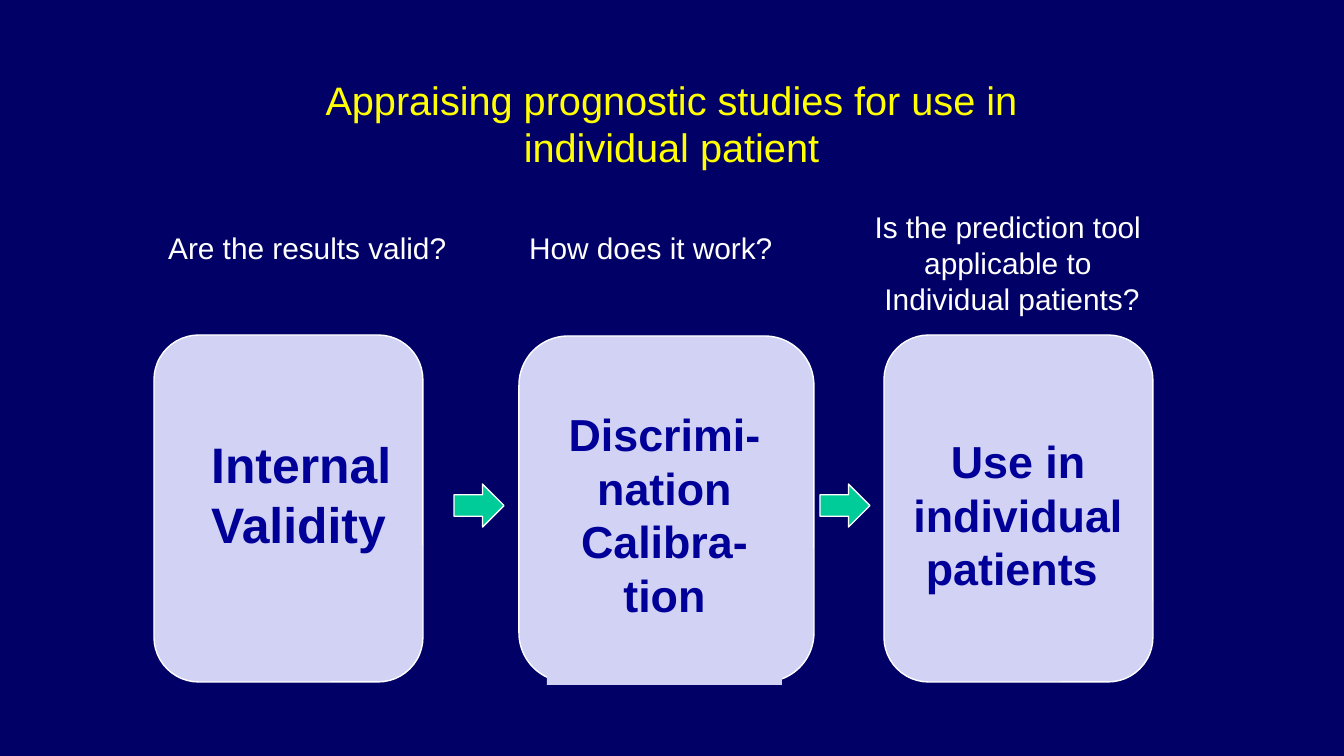
from pptx import Presentation
from pptx import util as u
from pptx.dml.color import RGBColor
from pptx.enum import shapes, text

PX = 6804  # EMU per px
COLOURS = {
    "background": "000066",
    "title": "FFFF00",
    "question": "FFFFFF",
    "card": "D2D2F4",
    "label": "000099",
    "arrow": "00CC99",
    "outline": "FFFFFF",
}
LEFT, CENTRE = text.PP_ALIGN.LEFT, text.PP_ALIGN.CENTER
ARROW_LEFTS = (454, 820)

# box, lines, alignment, wrap
QUESTIONS = [
    ((155, 223, 309, 50), ["Are the results valid?"], LEFT, False),
    ((516, 223, 273, 50), ["How does it work?"], LEFT, False),
    ((848, 202, 328, 122),
     ["Is the prediction tool ", "applicable to ", "Individual patients?"],
     CENTRE, True),
]

# card box, label box, lines, size, alignment, wrap
CARDS = [
    ((154, 335, 269, 347), (198, 427, 208, 134),
     ["Internal", "Validity"], 26.7, LEFT, False),
    ((519, 336, 295, 346), (547, 400, 235, 285),
     ["Discrimi-", "nation", "Calibra-", "tion"], 24, CENTRE, True),
    ((884, 335, 269, 347), (891, 427, 254, 176),
     ["Use in individual patients "], 24, CENTRE, True),
]


def colour(name):
    return RGBColor.from_string(COLOURS[name])


def scaled(box):
    return [length * PX for length in box]


def write(shape, lines, size, ink, align=CENTRE, wrap=True, bold=False,
          anchor=text.MSO_ANCHOR.TOP, fit=text.MSO_AUTO_SIZE.SHAPE_TO_FIT_TEXT):
    """Fill a shape with one paragraph per line."""
    frame = shape.text_frame
    frame.word_wrap = wrap
    frame.auto_size = fit
    frame.vertical_anchor = anchor
    for index, line in enumerate(lines):
        para = frame.add_paragraph() if index else frame.paragraphs[0]
        para.alignment = align
        span = para.add_run()
        span.text = line
        span.font.name = "Arial"
        span.font.size = u.Pt(size)
        span.font.bold = bold
        span.font.color.rgb = colour(ink)


def add_text(page, box, *content, **style):
    write(page.shapes.add_textbox(*scaled(box)), *content, **style)


def add_block(parent, kind, box, fill, outlined=True):
    """Add a flat preset shape to a slide or group."""
    shape = parent.shapes.add_shape(kind, *scaled(box))
    shape.shadow.inherit = False
    shape.fill.solid()
    shape.fill.fore_color.rgb = colour(fill)
    if outlined:
        shape.line.color.rgb = colour("outline")
        shape.line.width = u.Pt(0.75)
    else:
        shape.line.fill.background()
    return shape


def add_card(page, card_box, label_box, lines, size, align, wrap):
    group = page.shapes.add_group_shape()
    add_block(group, shapes.MSO_SHAPE.ROUNDED_RECTANGLE, card_box, "card")
    label = add_block(group, shapes.MSO_SHAPE.RECTANGLE, label_box, "card",
                      outlined=False)
    write(label, lines, size, "label", align, wrap, bold=True)


def main():
    deck = Presentation()
    deck.slide_width, deck.slide_height = scaled((1344, 756))
    page = deck.slides.add_slide(deck.slide_layouts[6])
    page.background.fill.solid()
    page.background.fill.fore_color.rgb = colour("background")

    add_text(page, (243, 67, 857, 112),
             ["Appraising prognostic studies for use in individual patient"],
             21.3, "title", anchor=text.MSO_ANCHOR.MIDDLE,
             fit=text.MSO_AUTO_SIZE.NONE)
    for box, lines, align, wrap in QUESTIONS:
        add_text(page, box, lines, 16, "question", align=align, wrap=wrap)
    for card in CARDS:
        add_card(page, *card)
    for left in ARROW_LEFTS:
        add_block(page, shapes.MSO_SHAPE.RIGHT_ARROW, (left, 484, 50, 43), "arrow")

    deck.save("out.pptx")


if __name__ == "__main__":
    main()
